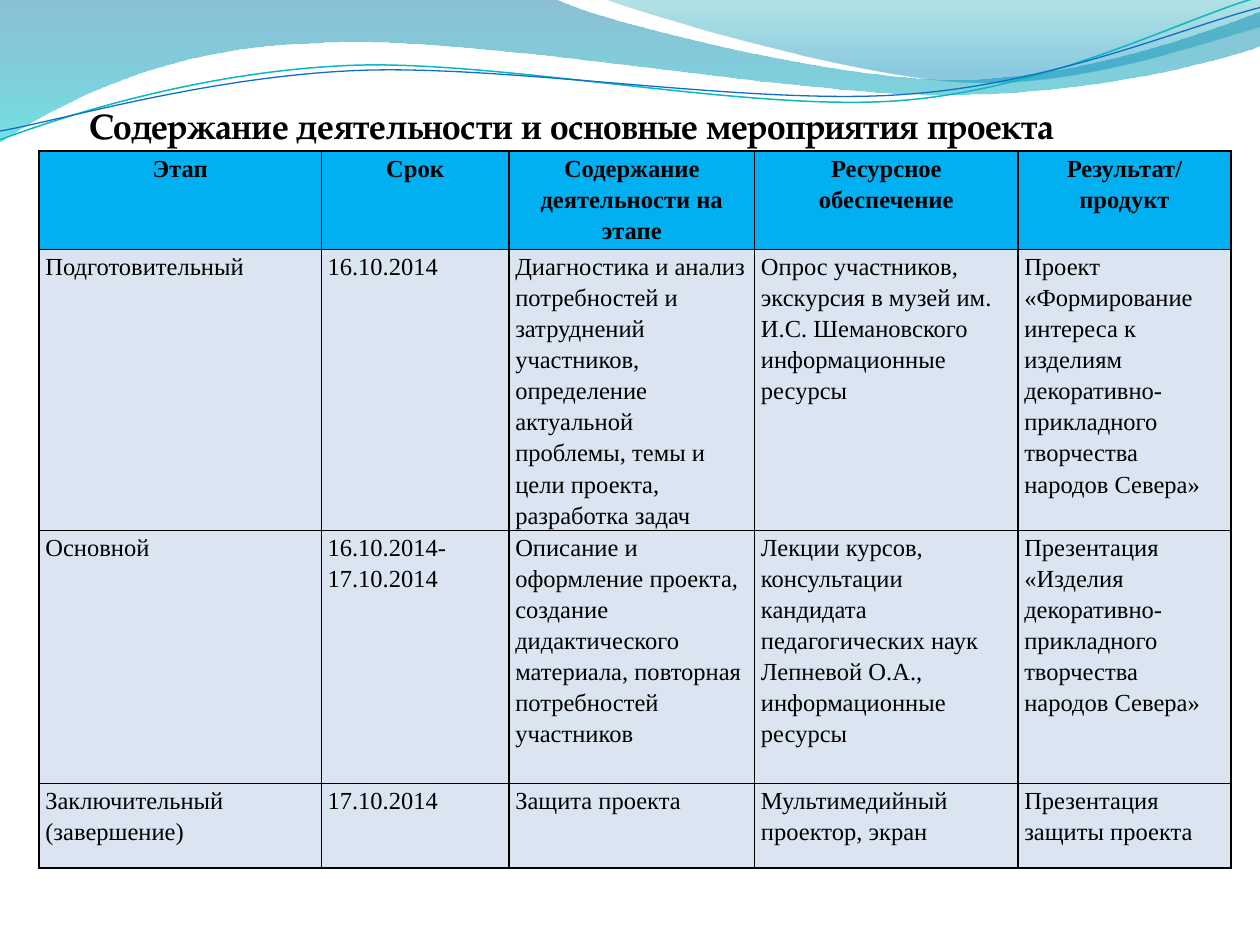
"""Build the project stages slide: a wave header, a title and a table of activities."""
from lxml import etree
from pptx import Presentation
from pptx.dml.color import RGBColor
from pptx.enum.text import MSO_ANCHOR, MSO_AUTO_SIZE, PP_ALIGN
from pptx.oxml import parse_xml
from pptx.oxml.ns import nsdecls, qn
from pptx.util import Inches, Pt

BLACK = RGBColor(0x00, 0x00, 0x00)
HEADER_BLUE = RGBColor(0x00, 0xB0, 0xF0)
BODY_BLUE = RGBColor(0xDB, 0xE5, 0xF1)
DEEP_BLUE = RGBColor(0x00, 0x74, 0xA1)
CYAN = RGBColor(0x00, 0xC6, 0xCF)
TEAL = RGBColor(0x00, 0xA1, 0xA9)
SKY_BLUE = RGBColor(0x00, 0x8B, 0xBF)
LINE_TEAL = RGBColor(0x0A, 0xB8, 0xBF)
LINE_BLUE = RGBColor(0x0F, 0x6F, 0xC6)


def write(frame, text, font, size, bold=False, align=PP_ALIGN.LEFT, spacing=1.0):
    frame.word_wrap = True
    paragraph = frame.paragraphs[0]
    paragraph.alignment = align
    paragraph.line_spacing = spacing
    paragraph.space_before = Pt(0)
    run = paragraph.add_run()
    run.text = text
    run.font.name = font
    run.font.size = Pt(size)
    run.font.bold = bold
    run.font.color.rgb = BLACK


def add_curve(shapes, start, segments, close):
    points = [(Inches(x), Inches(y)) for x, y in [start, *sum(segments, [])]]
    builder = shapes.build_freeform(*points[0], scale=1.0)
    builder.add_line_segments(points[1:], close=close)
    curve = builder.convert_to_shape()
    curve.shadow.inherit = False
    steps = iter(list(curve.element.spPr.iter(qn("a:lnTo"))))
    for segment in segments:
        step = next(steps)
        if len(segment) == 3:
            step.tag = qn("a:cubicBezTo")
            for _ in range(2):
                corner = next(steps)
                step.append(corner[0])
                corner.getparent().remove(corner)
    return curve


prs = Presentation()
prs.slide_width = Inches(10)
prs.slide_height = Inches(7.5)
slide = prs.slides.add_slide(prs.slide_layouts[5])

waves = [
    ((0, 0), [
        [(4.4, -0.01)],
        [(4.76, 0.17), (6.64, 0.63), (7.58, 0.63)],
        [(8.53, 0.63), (9.58, 0.26), (10, 0.09)],
        [(10.01, 0.36)],
        [(9.83, 0.44), (8.7, 0.76), (7.46, 0.75)],
        [(6.22, 0.75), (3.82, 0.28), (2.57, 0.34)],
        [(1.29, 0.36), (0.46, 0.83), (-0.01, 1.13)],
    ], [(0, DEEP_BLUE, 45), (1, CYAN, 55)]),
    ((4.79, -0.01), [
        [(5.09, 0.11), (6.82, 0.62), (7.69, 0.65)],
        [(8.56, 0.69), (9.61, 0.32), (10, 0.21)],
        [(10, 0)],
    ], [(0, TEAL, 30), (0.8, SKY_BLUE, 45)]),
]
for start, segments, stops in waves:
    wave = add_curve(slide.shapes, start, segments, close=True)
    wave.line.fill.background()
    wave.fill.gradient()
    wave.fill.gradient_angle = 270
    for stop, (position, color, _) in zip(wave.fill.gradient_stops, stops):
        stop.position = position
        stop.color.rgb = color
    for color_node, (_, _, opacity) in zip(wave.element.spPr.iter(qn("a:srgbClr")), stops):
        etree.SubElement(color_node, qn("a:alpha"), val=str(opacity * 1000))

ripples = [
    ((0, 1.11), [
        [(0.48, 0.93), (1.58, 0.57), (2.77, 0.52)],
        [(3.95, 0.47), (5.93, 0.89), (7.13, 0.8)],
        [(8.33, 0.71), (9.38, 0.15), (9.98, -0.02)],
    ], LINE_TEAL, 0.85),
    ((0, 1.04), [
        [(0.47, 0.96), (1.64, 0.61), (2.83, 0.56)],
        [(4.03, 0.51), (5.97, 0.84), (7.17, 0.75)],
        [(8.36, 0.67), (9.41, 0.21), (10, 0.06)],
    ], LINE_BLUE, 0.75),
]
for start, segments, color, width in ripples:
    ripple = add_curve(slide.shapes, start, segments, close=False)
    ripple.fill.background()
    ripple.line.color.rgb = color
    ripple.line.width = Pt(width)

title = slide.shapes.title
title.left, title.top, title.width, title.height = (Inches(v) for v in (0.31, 0.78, 9.69, 0.55))
title.text_frame.auto_size = MSO_AUTO_SIZE.NONE
title.text_frame.vertical_anchor = MSO_ANCHOR.TOP
title.text_frame.margin_left = Inches(0.4)
write(title.text_frame, "Содержание деятельности и основные мероприятия проекта",
      font="TeX Gyre Pagella", size=20.1, bold=True)
title.text_frame.paragraphs[0].runs[0].font._element.set("kern", "0")
title.element.getparent().append(title.element)

stages = [
    ["Этап", "Срок", "Содержание деятельности на этапе", "Ресурсное обеспечение", "Результат/ продукт"],
    ["Подготовительный", "16.10.2014",
     "Диагностика и анализ потребностей и затруднений участников, определение актуальной "
     "проблемы, темы и цели проекта, разработка задач",
     "Опрос участников, экскурсия в музей им. И.С. Шемановского информационные ресурсы",
     "Проект «Формирование интереса к изделиям декоративно-прикладного творчества народов Севера»"],
    ["Основной", "16.10.2014-17.10.2014",
     "Описание и оформление проекта, создание дидактического материала, повторная "
     "потребностей участников",
     "Лекции курсов, консультации кандидата педагогических наук Лепневой О.А., "
     "информационные ресурсы",
     "Презентация «Изделия декоративно-прикладного творчества народов Севера»"],
    ["Заключительный (завершение)", "17.10.2014", "Защита проекта",
     "Мультимедийный проектор, экран", "Презентация защиты проекта"],
]
column_widths = [2.24, 1.49, 1.95, 2.09, 1.69]
row_heights = [0.78, 2.23, 2.01, 0.67]
left_aligned = {(1, 2), (1, 3), (1, 4), (2, 2), (2, 3)}

plan = slide.shapes.add_table(len(row_heights), len(column_widths), Inches(0.31), Inches(1.2),
                              Inches(sum(column_widths)), Inches(sum(row_heights))).table
plan.first_row = False
plan.horz_banding = False
for column, width in zip(plan.columns, column_widths):
    column.width = Inches(width)
for row, height in zip(plan.rows, row_heights):
    row.height = Inches(height)

for r, stage in enumerate(stages):
    for c, text in enumerate(stage):
        cell = plan.cell(r, c)
        header = r == 0
        cell.margin_left = cell.margin_right = Inches(0.05)
        cell.margin_top = cell.margin_bottom = 0
        cell.fill.solid()
        cell.fill.fore_color.rgb = HEADER_BLUE if header else BODY_BLUE
        if header:
            align = PP_ALIGN.CENTER
        else:
            align = PP_ALIGN.LEFT if (r, c) in left_aligned else PP_ALIGN.JUSTIFY
        write(cell.text_frame, text, font="Times New Roman", size=14, bold=header,
              align=align, spacing=1.15)
        properties = cell._tc.get_or_add_tcPr()
        for index, side in enumerate(("lnL", "lnR", "lnT", "lnB")):
            properties.insert(index, parse_xml(
                f'<a:{side} {nsdecls("a")} w="{Pt(1)}"><a:solidFill>'
                f'<a:srgbClr val="{BLACK}"/></a:solidFill></a:{side}>'))

prs.save("out.pptx")
